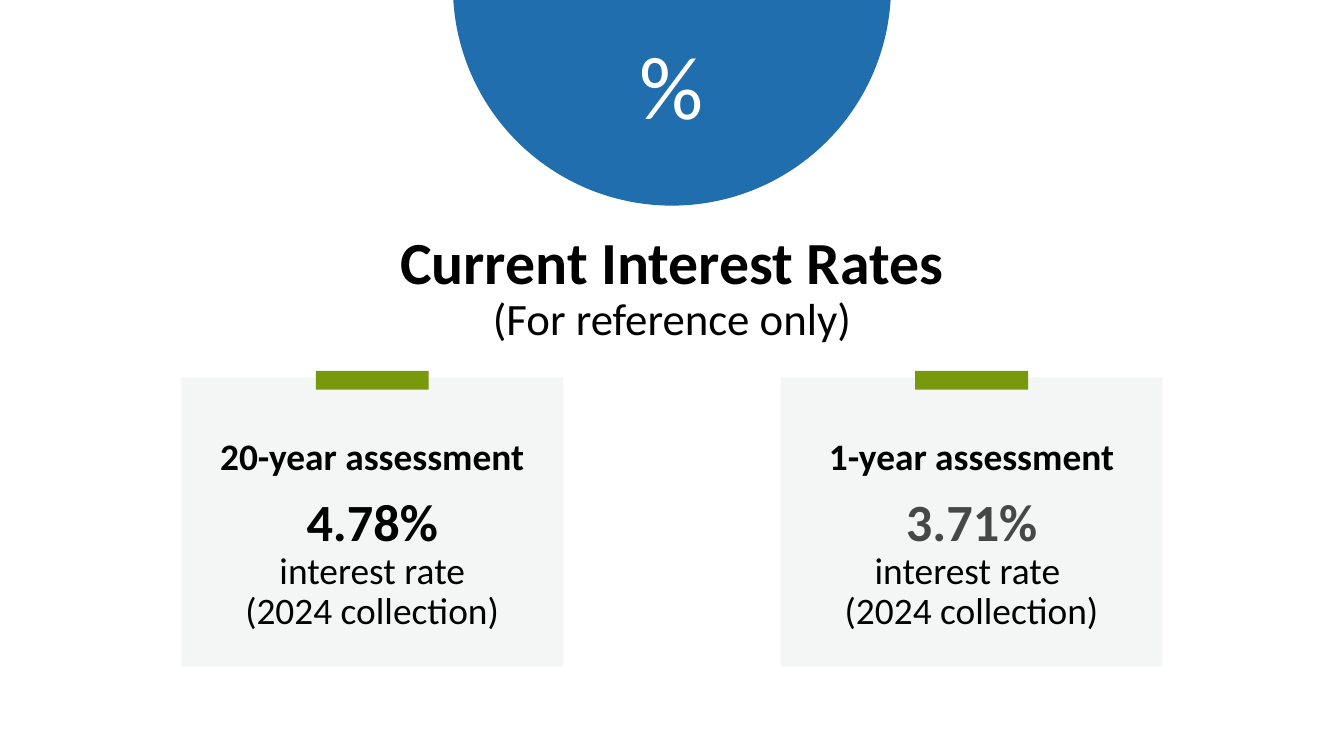
from copy import deepcopy

from pptx import Presentation
from pptx.dml.color import RGBColor
from pptx.enum.shapes import MSO_SHAPE
from pptx.enum.text import MSO_ANCHOR, PP_ALIGN
from pptx.oxml.ns import qn
from pptx.util import Inches, Pt

RECT, OVAL = MSO_SHAPE.RECTANGLE, MSO_SHAPE.OVAL
MIDDLE, TOP = MSO_ANCHOR.MIDDLE, MSO_ANCHOR.TOP
CENTER = PP_ALIGN.CENTER

BLUE, GREEN, GRAY = "206EAD", "77990B", "F4F5F5"
BLACK, DARK, WHITE = "000000", "474747", "FFFFFF"

TITLE = [[("Current Interest Rates", 32, True, BLACK),
          ("(For reference only)", 24, False, BLACK)]]
CARDS = [("20-year assessment", "4.78%", BLACK, "interest rate"),
         ("1-year assessment", "3.71%", DARK, "interest rate ")]
PERIOD = "(2024 collection)"

SLIDE_W = 10
CIRCLE_D, CIRCLE_TOP = 3.26, -1.73
CARD_X, CARD_STEP, CARD_W = 1.35, 4.46, 2.84
TAB_W = 0.84


def color(value):
    return RGBColor.from_string(value)


def add_block(shapes, kind, x, y, w, h, fill):
    sp = shapes.add_shape(kind, Inches(x), Inches(y), Inches(w), Inches(h))
    sp.shadow.inherit = False
    sp.fill.solid()
    sp.fill.fore_color.rgb = color(fill)
    sp.line.fill.background()


def write(sp, paragraphs, anchor=MIDDLE, spacing=0.9):
    tf = sp.text_frame
    tf.word_wrap = True
    tf.vertical_anchor = anchor
    tf.text = "\n".join("\v".join(line[0] for line in lines)
                        for lines in paragraphs)
    for p, lines in zip(tf.paragraphs, paragraphs):
        p.alignment = CENTER
        p.line_spacing = spacing
        for r, (_, size, bold, ink) in zip(p.runs, lines):
            r.font.name = "Calibri"
            r.font.size = Pt(size)
            r.font.bold = bold
            r.font.color.rgb = color(ink)
        for r, br in zip(p.runs, p._p.findall(qn("a:br"))):
            br.append(deepcopy(r._r.find(qn("a:rPr"))))


def add_text(shapes, x, y, w, h, paragraphs, **layout):
    sp = shapes.add_textbox(Inches(x), Inches(y), Inches(w), Inches(h))
    write(sp, paragraphs, **layout)


def add_card(s, x, heading, rate, ink, label):
    shapes = s.shapes.add_group_shape().shapes
    add_block(shapes, RECT, x, 2.81, CARD_W, 2.15, GRAY)
    add_text(shapes, x, 3.01, CARD_W, 0.8, [[(heading, 20, True, BLACK)]])
    add_block(shapes, RECT, x + (CARD_W - TAB_W) / 2, 2.76, TAB_W, 0.14, GREEN)
    add_text(shapes, x, 3.8, CARD_W, 0.8, [[(rate, 28, True, ink)],
                                           [(label, 20, False, BLACK)],
                                           [(PERIOD, 20, False, BLACK)]])


prs = Presentation()
prs.slide_width = Inches(SLIDE_W)
prs.slide_height = Inches(SLIDE_W * 9 / 16)
s = prs.slides.add_slide(prs.slide_layouts[5])

title = s.shapes.title
title.left, title.top = Inches(0.54), Inches(1.68)
title.width, title.height = Inches(8.92), Inches(0.94)
write(title, TITLE)

add_block(s.shapes, OVAL, (SLIDE_W - CIRCLE_D) / 2, CIRCLE_TOP,
          CIRCLE_D, CIRCLE_D, BLUE)
add_text(s.shapes, 4.45, 0.17, 1.1, 0.91, [[("%", 48, False, WHITE)]],
         anchor=TOP, spacing=1.0)

for i, card in enumerate(CARDS):
    add_card(s, CARD_X + i * CARD_STEP, *card)

prs.save("out.pptx")
